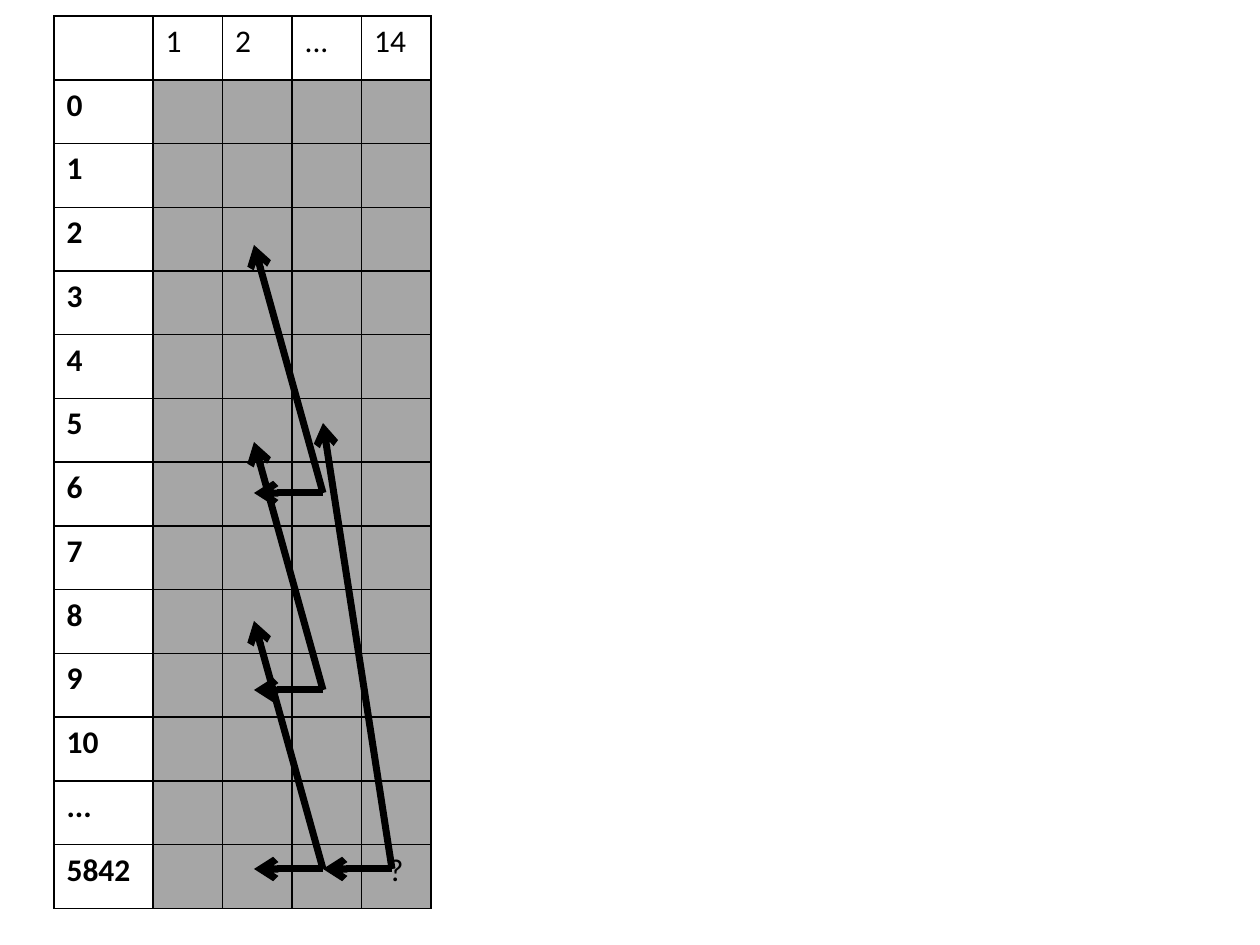
from dataclasses import dataclass

from lxml.etree import SubElement as Sub
from pptx import Presentation
from pptx.dml.color import RGBColor as Rgb
from pptx.enum.shapes import MSO_CONNECTOR as Conn
from pptx.enum.text import PP_ALIGN as Align
from pptx.oxml.ns import qn
from pptx.util import Emu, Pt

BLACK, WHITE, GREY = "000000", "FFFFFF", "A6A6A6"
HEADS = ["", "1", "2", "...", "14"]
ROWS = [*map(str, range(11)), "...", "5842"]
LEFT, TOP, HIGH = 54, 16, 893
FIRST, REST = 99, 278
STEP = 69


@dataclass
class Fork:
    x: int
    y: int
    rise: int


FORKS = [
    Fork(392, 869, 446),
    Fork(323, 869, 248),
    Fork(323, 690, 248),
    Fork(323, 493, 248),
]


def px(n: int) -> Emu:
    return Emu(round(n * 914400 / 126))


def tint(code: str) -> Rgb:
    return Rgb.from_string(code)


def edge(cell) -> None:
    props = cell._tc.get_or_add_tcPr()
    for i, side in enumerate(("lnL", "lnR", "lnT", "lnB")):
        line = props.makeelement(qn(f"a:{side}"), {"w": str(Pt(1))})
        props.insert(i, line)
        fill = Sub(line, qn("a:solidFill"))
        Sub(fill, qn("a:srgbClr"), val=BLACK)


def fill_cell(cell, text: str, back: str, bold: bool) -> None:
    cell.fill.solid()
    cell.fill.fore_color.rgb = tint(back)
    edge(cell)
    cell.text = text
    font = cell.text_frame.paragraphs[0].font
    font.name, font.size, font.bold = "Calibri", Pt(18), bold
    font.color.rgb = tint(BLACK)


def draw_grid(slide) -> None:
    body = [HEADS] + [[name] + [""] * 4 for name in ROWS]
    body[-1][-1] = "?"
    grid = slide.shapes.add_table(
        len(body), len(HEADS), px(LEFT), px(TOP), px(FIRST + REST), px(HIGH)
    ).table
    grid.first_row = grid.horz_banding = False
    for c, col in enumerate(grid.columns):
        col.width = px(REST) // 4 if c else px(FIRST)
    for r, row in enumerate(body):
        grid.rows[r].height = px(HIGH) // len(body)
        for c, text in enumerate(row):
            back = GREY if r and c else WHITE
            fill_cell(grid.cell(r, c), text, back, r > 0 and c == 0)
    last = grid.cell(len(body) - 1, len(HEADS) - 1)
    last.text_frame.paragraphs[0].alignment = Align.CENTER


def draw_arrow(slide, x: int, y: int, rise: int) -> None:
    link = slide.shapes.add_connector(
        Conn.STRAIGHT, px(x), px(y), px(x - STEP), px(y - rise)
    )
    link.line.width = Pt(4)
    link.line.color.rgb = tint(BLACK)
    Sub(link.line._get_or_add_ln(), qn("a:tailEnd"), type="arrow")
    Sub(link._element.spPr, qn("a:effectLst"))


def main() -> None:
    deck = Presentation()
    deck.slide_width, deck.slide_height = px(1260), px(945)
    slide = deck.slides.add_slide(deck.slide_layouts[6])
    draw_grid(slide)
    for fork in FORKS:
        for rise in (0, fork.rise):
            draw_arrow(slide, fork.x, fork.y, rise)
    deck.save("out.pptx")


if __name__ == "__main__":
    main()
